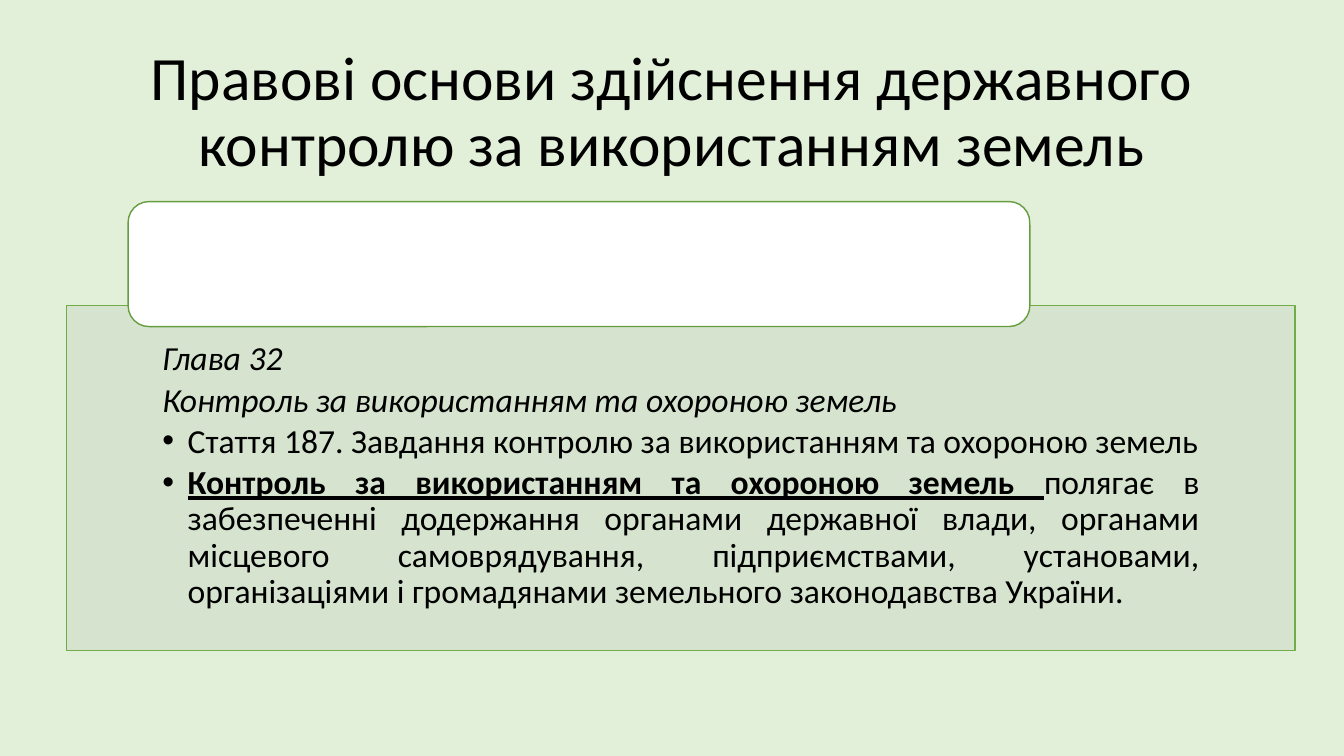
from lxml import etree
from pptx import Presentation
from pptx.dml.color import RGBColor
from pptx.enum.shapes import MSO_SHAPE
from pptx.enum.text import MSO_ANCHOR, PP_ALIGN
from pptx.oxml.ns import qn
from pptx.util import Cm, Pt

RECTANGLE, ROUNDED = MSO_SHAPE.RECTANGLE, MSO_SHAPE.ROUNDED_RECTANGLE
TOP, MIDDLE = MSO_ANCHOR.TOP, MSO_ANCHOR.MIDDLE
CENTER, JUSTIFY = PP_ALIGN.CENTER, PP_ALIGN.JUSTIFY

FONT = "Calibri"
BLACK, WHITE = "000000", "FFFFFF"
BACKGROUND, PANEL_FILL = "E2F0D9", "D5E3CF"
PANEL_LINE, TAB_LINE = "70AD47", "669D40"

TITLE = "Правові основи здійснення державного контролю за використанням земель"
CHAPTER_LINES = ["Глава 32", "Контроль за використанням та охороною земель"]
ARTICLE = "Стаття 187. Завдання контролю за використанням та охороною земель"
TERM = "Контроль за використанням та охороною земель "
DEFINITION = (
    "полягає в забезпеченні додержання органами державної влади, органами "
    "місцевого самоврядування, підприємствами, установами, організаціями "
    "і громадянами земельного законодавства України."
)


def color(hex_string):
    return RGBColor.from_string(hex_string)


def style_paragraph(paragraph, size, alignment):
    paragraph.alignment = alignment
    paragraph.line_spacing = 0.9
    paragraph.font.name = FONT
    paragraph.font.size = Pt(size)
    paragraph.font.color.rgb = color(BLACK)


def set_hanging_indent(paragraph, bulleted):
    properties = paragraph._p.get_or_add_pPr()
    properties.set("marL", str(Cm(0.64)))
    properties.set("indent", str(-Cm(0.64)))
    if bulleted:
        etree.SubElement(properties, qn("a:buFont")).set("typeface", "Arial")
        etree.SubElement(properties, qn("a:buChar")).set("char", "•")


def add_box(slide, preset, box, fill, line):
    shape = slide.shapes.add_shape(preset, *map(Cm, box))
    shape.shadow.inherit = False
    shape.fill.solid()
    shape.fill.fore_color.rgb = color(fill)
    shape.line.color.rgb = color(line)
    shape.line.width = Pt(1)
    return shape


def add_title(slide, box):
    frame = slide.shapes.add_textbox(*map(Cm, box)).text_frame
    frame.word_wrap = True
    frame.vertical_anchor = MIDDLE
    heading = frame.paragraphs[0]
    heading.text = TITLE
    style_paragraph(heading, 44, CENTER)


def add_law_panel(slide, box):
    """Translucent panel with the chapter text and a blank tab over its top edge."""
    left, top, width, _ = box
    panel = add_box(slide, RECTANGLE, box, PANEL_FILL, PANEL_LINE)
    fill_color = panel.fill._xPr.find(qn("a:solidFill"))[0]
    etree.SubElement(fill_color, qn("a:alpha")).set("val", "90000")

    frame = panel.text_frame
    frame.word_wrap = True
    frame.vertical_anchor = TOP
    frame.margin_left = frame.margin_right = Cm(2.41)
    frame.margin_top, frame.margin_bottom = Cm(0.91), Cm(0.48)

    entries = [[line] for line in CHAPTER_LINES] + [[ARTICLE], [TERM, DEFINITION]]
    for index, texts in enumerate(entries):
        paragraph = frame.add_paragraph() if index else frame.paragraphs[0]
        is_chapter = index < len(CHAPTER_LINES)
        style_paragraph(paragraph, 24, JUSTIFY)
        paragraph.level = 1
        paragraph.space_before = Pt(0)
        paragraph.space_after = Pt(3.6)
        paragraph.font.italic = is_chapter
        set_hanging_indent(paragraph, bulleted=not is_chapter)
        for text in texts:
            run = paragraph.add_run()
            run.text = text
            if text is TERM:
                run.font.bold = run.font.underline = True

    tab = (left + 0.05 * width, top - 2.62, 0.734 * width, 3.15)
    add_box(slide, ROUNDED, tab, WHITE, TAB_LINE)


def main():
    presentation = Presentation()
    presentation.slide_width, presentation.slide_height = Cm(33.87), Cm(19.05)
    slide = presentation.slides.add_slide(presentation.slide_layouts[6])
    slide.background.fill.solid()
    slide.background.fill.fore_color.rgb = color(BACKGROUND)
    add_title(slide, (2.33, 1.02, 29.21, 3.68))
    add_law_panel(slide, (1.68, 7.7, 30.96, 8.69))
    presentation.save("out.pptx")


if __name__ == "__main__":
    main()
